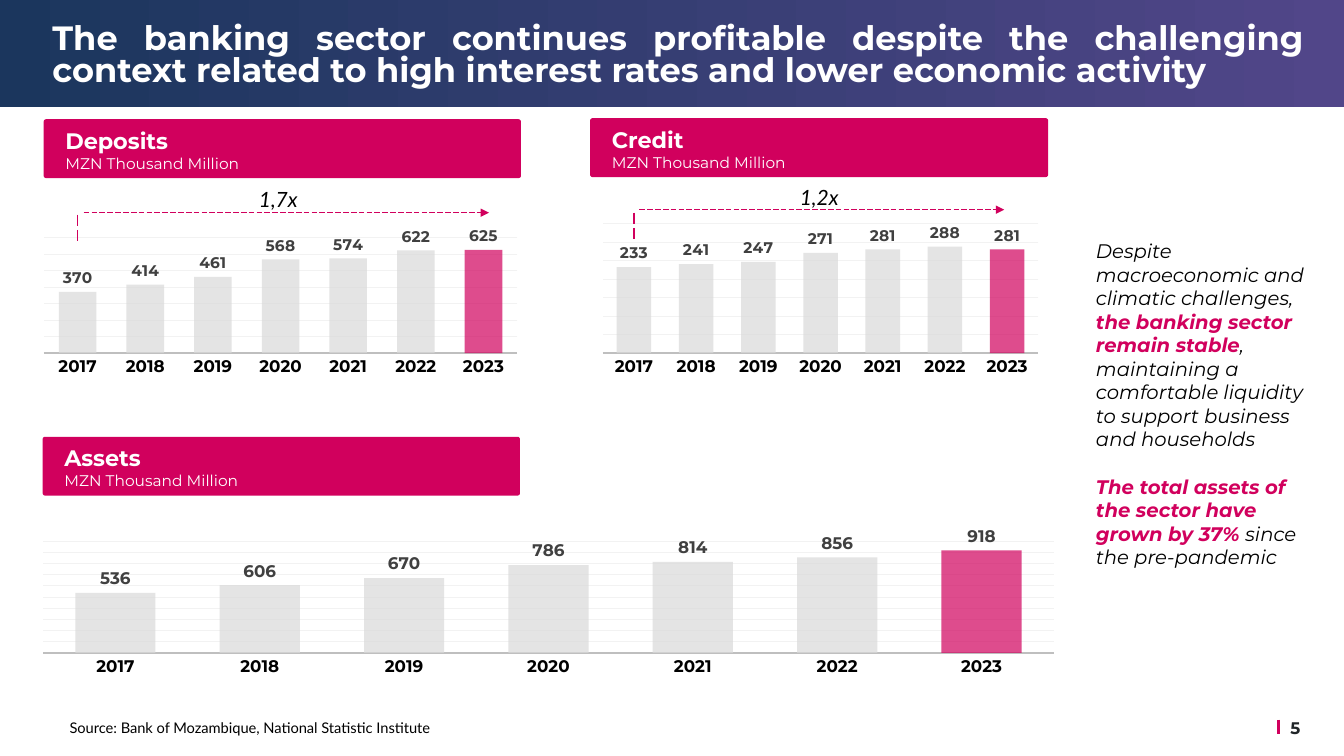
import pptx
import pptx.chart.data
import pptx.dml.color
import pptx.enum.chart
import pptx.enum.dml
import pptx.enum.shapes
import pptx.enum.text
import pptx.oxml
import pptx.oxml.ns
import pptx.util

Inches, Pt = pptx.util.Inches, pptx.util.Pt
RGBColor = pptx.dml.color.RGBColor
ALIGN = pptx.enum.text.PP_ALIGN
SHAPE = pptx.enum.shapes.MSO_SHAPE

PINK = RGBColor(0xD1, 0x00, 0x5D)
NAVY = RGBColor(0x1B, 0x36, 0x5D)
PURPLE = RGBColor(0x51, 0x46, 0x89)
WHITE = RGBColor(0xFF, 0xFF, 0xFF)
BLACK = RGBColor(0x00, 0x00, 0x00)
INK = RGBColor(0x20, 0x25, 0x28)
LABEL_GREY = RGBColor(0x40, 0x40, 0x40)
BAR_GREY = RGBColor(0xD9, 0xD9, 0xD9)
AXIS_GREY = RGBColor(0xBF, 0xBF, 0xBF)
GRID_GREY = RGBColor(0xF2, 0xF2, 0xF2)

YEARS = [str(year) for year in range(2017, 2024)]


class SlideBuilder:
    font = "Montserrat"

    def __init__(self, prs, layout):
        self.s = prs.slides.add_slide(layout)

    def style(self, font, color=BLACK, **formats):
        for name, value in {"name": self.font, "bold": False, "italic": False, **formats}.items():
            setattr(font, name, Pt(value) if name == "size" else value)
        font.color.rgb = color

    def fill_text(self, sp, paragraphs, margins=None, **paragraph_formats):
        """Write paragraphs, each a list of (text, font formats) runs."""
        tf = sp.text_frame
        tf.word_wrap = True
        tf.auto_size = pptx.enum.text.MSO_AUTO_SIZE.NONE
        tf.vertical_anchor = pptx.enum.text.MSO_ANCHOR.TOP
        if margins is not None:
            for side in ("left", "top", "right", "bottom"):
                setattr(tf, f"margin_{side}", Inches(margins))
        for i, runs in enumerate(paragraphs):
            p = tf.add_paragraph() if i else tf.paragraphs[0]
            for name, value in paragraph_formats.items():
                setattr(p, name, value)
            for text, formats in runs:
                r = p.add_run()
                r.text = text
                self.style(r.font, **formats)
        return tf

    def text(self, box, paragraphs, **formats):
        sp = self.s.shapes.add_textbox(*map(Inches, box))
        return self.fill_text(sp, paragraphs, **formats)

    def placeholder(self, idx, box, paragraphs, **formats):
        sp = self.s.placeholders[idx]
        sp.left, sp.top, sp.width, sp.height = map(Inches, box)
        self.s.shapes._spTree.append(sp._element)  # bring to front
        return self.fill_text(sp, paragraphs, **formats)

    def band(self, box):
        sp = self.s.shapes.add_shape(SHAPE.RECTANGLE, *map(Inches, box))
        sp.shadow.inherit = False
        sp.line.fill.background()
        sp.fill.gradient()
        sp.fill.gradient_angle = 180
        for stop, color, position in zip(sp.fill.gradient_stops, (PURPLE, NAVY), (0, 1)):
            stop.color.rgb = color
            stop.position = position

    def header(self, left, top, width, title):
        sp = self.s.shapes.add_shape(SHAPE.ROUNDED_RECTANGLE, *map(Inches, (left, top, width, 0.57)))
        sp.adjustments[0] = 0.03
        sp.shadow.inherit = False
        sp.fill.solid()
        sp.fill.fore_color.rgb = sp.line.color.rgb = PINK
        sp.line.width = Pt(1)
        self.text((left + 0.11, top + 0.02, 3, 0.56), [
            [(title, {"size": 16, "bold": True, "color": WHITE})],
            [("MZN Thousand Million", {"size": 11, "color": WHITE})]])

    def line(self, x1, y1, x2, y2, width, dashed=True, arrow=False):
        cx = self.s.shapes.add_connector(
            pptx.enum.shapes.MSO_CONNECTOR.STRAIGHT, *map(Inches, (x1, y1, x2, y2)))
        cx.line.color.rgb = PINK
        cx.line.width = Pt(width)
        if dashed:
            cx.line.dash_style = pptx.enum.dml.MSO_LINE.LONG_DASH
        if arrow:
            pptx.oxml.ns.qn("a:tailEnd")
            tail = cx.line._get_or_add_ln().makeelement(pptx.oxml.ns.qn("a:tailEnd"), {"type": "triangle"})
            cx.line._get_or_add_ln().append(tail)
        sppr = cx._element.spPr
        sppr.append(sppr.makeelement(pptx.oxml.ns.qn("a:effectLst"), {}))

    def growth(self, x, y, start, end, drop_top, label, label_box):
        """Dashed bracket with an arrow and the growth multiple above it."""
        self.line(x, drop_top, x, 2.41, 1)
        self.line(start, y, end, y, 0.5, arrow=True)
        self.text(label_box, [[(label, {"size": 15, "name": "Lato", "italic": True})]],
                  alignment=ALIGN.CENTER)

    def columns(self, box, values, plot, top_value, step, label_size):
        data = pptx.chart.data.CategoryChartData(number_format="#,##0")
        data.categories = YEARS
        data.add_series("Series 1", values)
        chart = self.s.shapes.add_chart(
            pptx.enum.chart.XL_CHART_TYPE.COLUMN_CLUSTERED, *map(Inches, box), data).chart
        chart.has_legend = chart.has_title = False
        self.style(chart.font, size=10)

        axis = chart.category_axis
        axis.major_tick_mark = pptx.enum.chart.XL_TICK_MARK.NONE
        axis.format.line.color.rgb = AXIS_GREY
        axis.format.line.width = Pt(1.25)
        self.style(axis.tick_labels.font, size=12, bold=True)

        axis = chart.value_axis
        for name, value in {"visible": False, "minimum_scale": 0, "maximum_scale": top_value,
                            "major_unit": step, "has_major_gridlines": True}.items():
            setattr(axis, name, value)
        axis.major_gridlines.format.line.color.rgb = GRID_GREY
        axis.major_gridlines.format.line.width = Pt(0.75)

        bars = chart.plots[0]
        for name, value in {"gap_width": 80, "overlap": 25, "vary_by_categories": False,
                            "has_data_labels": True}.items():
            setattr(bars, name, value)
        labels = bars.data_labels
        labels.show_value = True
        labels.number_format = "#,##0"
        labels.number_format_is_linked = False
        labels.position = pptx.enum.chart.XL_LABEL_POSITION.OUTSIDE_END
        self.style(labels.font, LABEL_GREY, size=label_size, bold=True)

        series = bars.series[0]
        series.invert_if_negative = False
        for fmt, color in ((series.format, BAR_GREY), (series.points[len(values) - 1].format, PINK)):
            fmt.fill.solid()
            fmt.fill.fore_color.rgb = color
        for clr in chart._chartSpace.xpath(".//c:ser//c:spPr/a:solidFill/a:srgbClr"):
            clr.append(clr.makeelement(pptx.oxml.ns.qn("a:alpha"), {"val": "70000"}))
        self.set_plot_layout(chart, plot)

    def set_plot_layout(self, chart, plot):
        area = chart._chartSpace.chart.plotArea
        for old in area.xpath("c:layout"):
            area.remove(old)
        settings = [("layoutTarget", "inner"), ("xMode", "edge"), ("yMode", "edge"), *zip("xywh", plot)]
        inner = "".join(f'<c:{name} val="{value}"/>' for name, value in settings)
        area.insert(0, pptx.oxml.parse_xml(
            f'<c:layout {pptx.oxml.ns.nsdecls("c")}><c:manualLayout>{inner}</c:manualLayout></c:layout>'))


def main():
    prs = pptx.Presentation()
    prs.slide_width, prs.slide_height = Inches(13.33), Inches(7.5)
    b = SlideBuilder(prs, prs.slide_layouts[1])

    b.band((0, 0, 13.33, 1.06))
    b.placeholder(0, (0.42, 0.19, 12.61, 0.75), [[(
        "The banking sector continues profitable despite the challenging context "
        "related to high interest rates and lower economic activity",
        {"size": 24, "bold": True, "color": WHITE})]],
        alignment=ALIGN.JUSTIFY, line_spacing=0.8)

    plain = {"size": 14, "italic": True}
    strong = {**plain, "bold": True, "color": PINK}
    tf = b.placeholder(1, (10.77, 2.32, 2.27, 3.4), [
        [("Despite macroeconomic and climatic challenges, ", plain),
         ("the banking sector remain stable", strong),
         (", maintaining a comfortable liquidity to support business and households", plain)],
        [("The total assets of the sector have grown by 37% ", strong),
         ("since the pre-pandemic", plain)]], space_before=Pt(0))
    for p in tf.paragraphs:
        ppr = p._p.get_or_add_pPr()
        ppr.set("marL", "0")
        ppr.set("indent", "0")
        ppr.append(ppr.makeelement(pptx.oxml.ns.qn("a:buNone"), {}))
    tf.paragraphs[1].space_before = Pt(17)

    b.columns((0.42, 2.12, 4.72, 1.74), (370, 414, 461, 568, 574, 622, 625),
              (0.003, 0.136, 0.997, 0.659), 700, 100, 11)
    b.columns((5.82, 2.05, 4.57, 1.83), (233, 241, 247, 271, 281, 288, 281),
              (0.035, 0.093, 0.945, 0.702), 350, 50, 11)
    b.columns((0.42, 5.06, 10.04, 1.79), (536, 606, 670, 786, 814, 856, 918),
              (0, 0.173, 1, 0.619), 1000, 100, 12)

    b.growth(0.77, 2.11, 0.83, 4.85, 2.13, "1,7x", (2.45, 1.8, 0.62, 0.35))
    b.growth(6.29, 2.08, 6.34, 9.96, 2.11, "1,2x", (7.75, 1.78, 0.75, 0.36))

    b.header(0.44, 1.19, 4.72, "Deposits")
    b.header(5.86, 1.18, 4.53, "Credit")
    b.header(0.43, 4.34, 4.72, "Assets")

    b.text((0.69, 7.13, 3.74, 0.18), [[(
        "Source: Bank of Mozambique, National Statistic Institute",
        {"size": 10.5, "name": "Lato"})]], margins=0)
    b.line(12.68, 7.14, 12.68, 7.28, 2.25, dashed=False)
    b.text((12.7, 7.07, 0.55, 0.3), [[("5", {"size": 12, "bold": True, "color": INK})]])

    prs.save("out.pptx")


if __name__ == "__main__":
    main()
